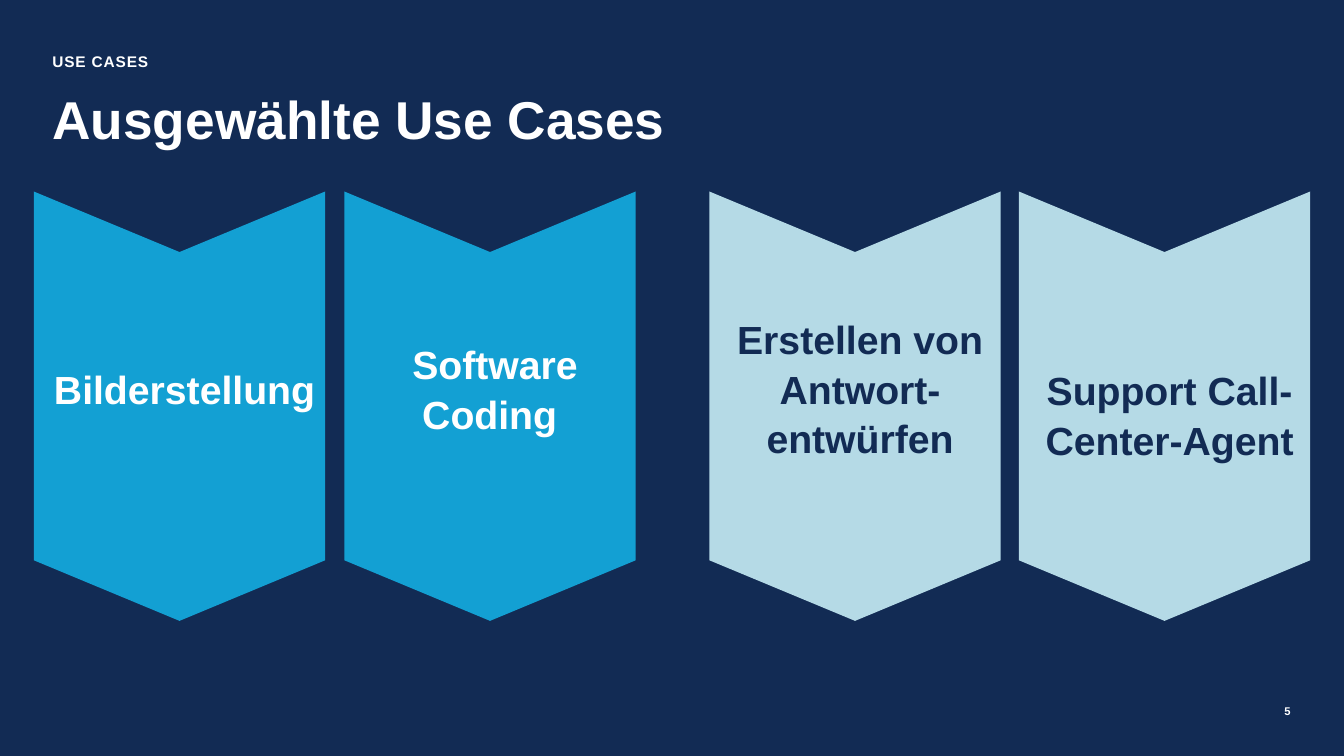
from dataclasses import dataclass

import pptx
import pptx.dml.color
import pptx.enum.shapes
import pptx.enum.text
import pptx.util
from pptx.util import Inches

ALIGN = pptx.enum.text.PP_ALIGN
ANCHOR = pptx.enum.text.MSO_ANCHOR


@dataclass(frozen=True)
class Theme:
    font: str = "Arial"
    navy: str = "122B54"
    blue: str = "13A0D3"
    pale: str = "B5DAE6"
    white: str = "FFFFFF"
    title_size: int = 38
    use_case_size: int = 28
    kicker_size: int = 11
    number_size: int = 8


THEME = Theme()
CHEVRON_LENGTH = 4.26
CHEVRON_BREADTH = 2.89
CHEVRON_CENTER_Y = 4.03
LINE_RAISE = 0.47

USE_CASES = [
    ("Bilderstellung", 1.78, THEME.blue, THEME.white, LINE_RAISE),
    ("Software Coding ", 4.86, THEME.blue, THEME.white, LINE_RAISE),
    ("Erstellen von Antwort-entwürfen", 8.48, THEME.pale, THEME.navy, LINE_RAISE),
    ("Support Call-Center-Agent", 11.55, THEME.pale, THEME.navy, 0),
]


def rgb(color):
    return pptx.dml.color.RGBColor.from_string(color)


def set_text(shape, text, size, color, align, anchor, insets=(0, 0, 0, 0)):
    frame = shape.text_frame
    frame.word_wrap = True
    frame.auto_size = pptx.enum.text.MSO_AUTO_SIZE.NONE
    frame.vertical_anchor = anchor
    frame.margin_left, frame.margin_top, frame.margin_right, frame.margin_bottom = map(
        Inches, insets
    )
    frame.text = text
    paragraph = frame.paragraphs[0]
    paragraph.alignment = align
    paragraph.font.name = THEME.font
    paragraph.font.size = pptx.util.Pt(size)
    paragraph.font.bold = True
    paragraph.font.color.rgb = rgb(color)
    return paragraph


def add_title(slide, text):
    title = slide.shapes.title
    title.left, title.top = Inches(0.52), Inches(0.96)
    title.width, title.height = Inches(10.2), Inches(1.02)
    paragraph = set_text(
        title, text, THEME.title_size, THEME.white, ALIGN.LEFT, ANCHOR.TOP
    )
    paragraph.line_spacing = pptx.util.Pt(THEME.title_size)


def add_label(slide, text, box, size, align, anchor):
    label = slide.shapes.add_textbox(*map(Inches, box))
    return set_text(label, text, size, THEME.white, align, anchor)


def add_use_case(slide, text, center_x, fill, color, raise_by):
    chevron = slide.shapes.add_shape(
        pptx.enum.shapes.MSO_SHAPE.CHEVRON,
        Inches(center_x - CHEVRON_LENGTH / 2),
        Inches(CHEVRON_CENTER_Y - CHEVRON_BREADTH / 2),
        Inches(CHEVRON_LENGTH),
        Inches(CHEVRON_BREADTH),
    )
    chevron.rotation = 90
    chevron.adjustments[0] = 0.208
    chevron.shadow.inherit = False
    chevron.fill.solid()
    chevron.fill.fore_color.rgb = rgb(fill)
    chevron.line.fill.background()
    paragraph = set_text(
        chevron,
        text,
        THEME.use_case_size,
        color,
        ALIGN.CENTER,
        ANCHOR.MIDDLE,
        (0.2, 0, 0.1 + raise_by, 0.1),
    )
    paragraph.line_spacing = 1.05
    chevron.text_frame._txBody.bodyPr.set("vert", "vert270")


def main():
    deck = pptx.Presentation()
    deck.slide_width, deck.slide_height = Inches(13.33), Inches(7.5)
    slide = deck.slides.add_slide(deck.slide_layouts[5])
    slide.background.fill.solid()
    slide.background.fill.fore_color.rgb = rgb(THEME.navy)

    add_title(slide, "Ausgewählte Use Cases")
    kicker = add_label(
        slide, "USE CASES", (0.52, 0.52, 10.2, 0.28),
        THEME.kicker_size, ALIGN.LEFT, ANCHOR.TOP,
    )
    kicker.runs[0].font._element.set("spc", "60")
    page_number = add_label(
        slide, "5", (12.51, 6.97, 0.29, 0.16),
        THEME.number_size, ALIGN.RIGHT, ANCHOR.MIDDLE,
    )
    page_number.line_spacing = pptx.util.Pt(10)
    for use_case in USE_CASES:
        add_use_case(slide, *use_case)
    deck.save("out.pptx")


if __name__ == "__main__":
    main()
